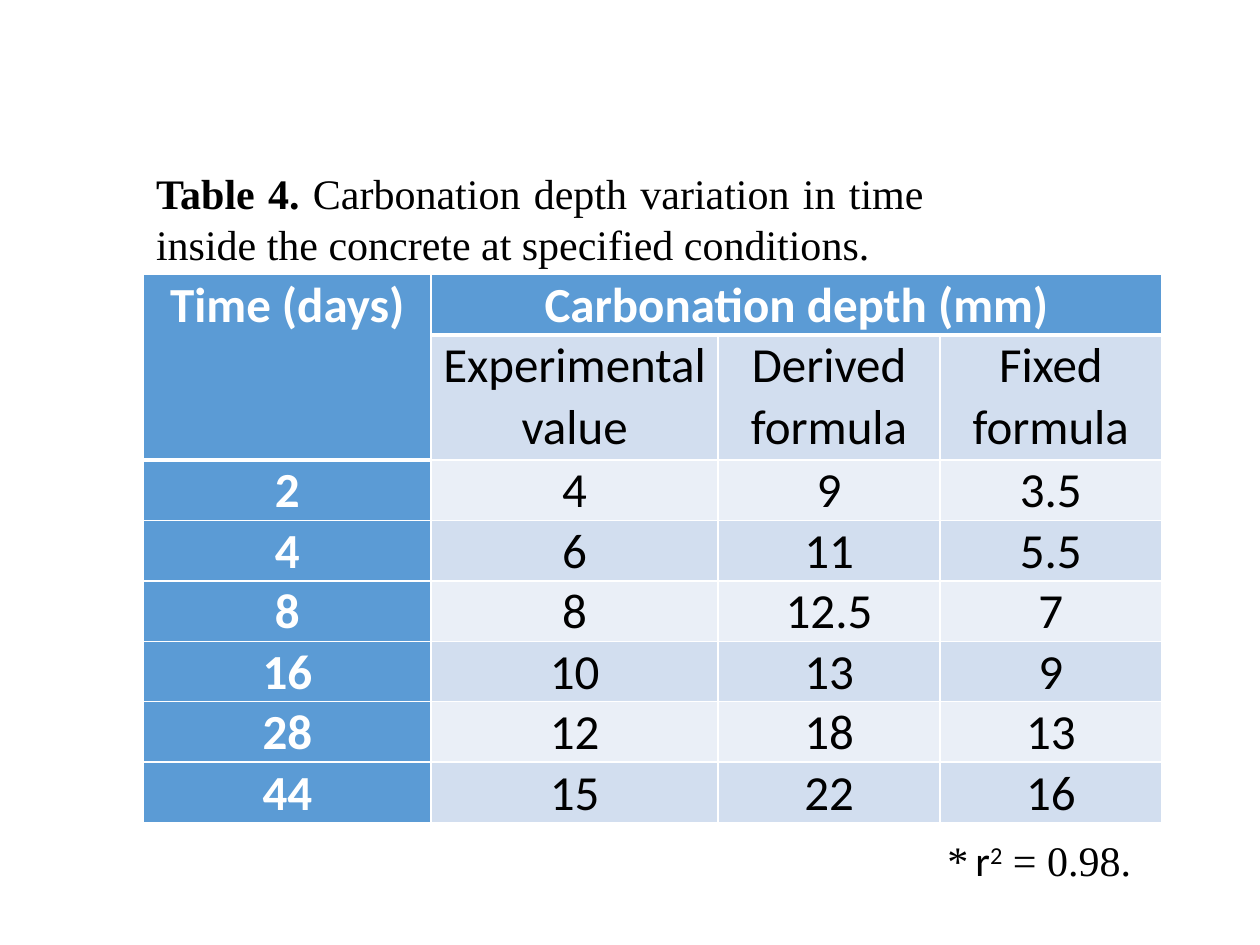
from dataclasses import dataclass
from lxml import etree
from pptx import Presentation
from pptx import util as u
from pptx.dml.color import RGBColor
from pptx.enum import text
from pptx.oxml.ns import qn


@dataclass(frozen=True)
class Theme:
    header: str = "5B9BD5"
    bands: tuple = ("EAEFF7", "D2DEEF")
    light: str = "FFFFFF"
    dark: str = "000000"
    serif: str = "Times New Roman"
    sans: str = "Calibri"
    cell_size: int = 28
    note_size: int = 24
    gap_size: int = 18
    thin: int = 1
    thick: int = 3


THEME = Theme()
ALIGN = text.PP_ALIGN

CAPTION = [
    ("Table 4.", THEME.serif, THEME.note_size, True, 0),
    (" Carbonation depth variation in time inside the concrete at specified conditions.",
     THEME.serif, THEME.note_size, False, 0),
]
FOOTNOTE = [
    ("*", THEME.serif, THEME.note_size, False, 0),
    (" ", THEME.sans, THEME.gap_size, False, 0),
    ("r", THEME.sans, THEME.note_size, False, 0),
    ("2", THEME.sans, THEME.note_size, False, 30),
    (" = 0.98.", THEME.serif, THEME.note_size, False, 0),
]
ROWS = [
    ("Time (days)", "Carbonation depth (mm)", "", ""),
    ("", "Experimental value", "Derived formula", "Fixed formula"),
    ("2", "4", "9", "3.5"),
    ("4", "6", "11", "5.5"),
    ("8", "8", "12.5", "7"),
    ("16", "10", "13", "9"),
    ("28", "12", "18", "13"),
    ("44", "15", "22", "16"),
]
LEFT, TOP = 1.14, 2.18
COLUMN_WIDTHS = [2.28, 2.28, 1.76, 1.76]
ROW_HEIGHTS = [0.48, 0.99] + [0.48] * 6


def format_paragraph(paragraph, alignment):
    paragraph.alignment = alignment
    paragraph.line_spacing = 1.02
    paragraph.space_after = u.Pt(0.2)


def format_run(run, face, size, bold, color):
    run.font.name = face
    run.font.size = u.Pt(size)
    run.font.bold = bold
    run.font.color.rgb = RGBColor.from_string(color)


def add_note(slide, box, parts):
    frame = slide.shapes.add_textbox(*map(u.Inches, box)).text_frame
    frame.word_wrap = True
    frame.auto_size = text.MSO_AUTO_SIZE.SHAPE_TO_FIT_TEXT
    paragraph = frame.paragraphs[0]
    format_paragraph(paragraph, ALIGN.JUSTIFY)
    for words, face, size, bold, baseline in parts:
        run = paragraph.add_run()
        run.text = words
        format_run(run, face, size, bold, THEME.dark)
        if baseline:
            run.font._element.set("baseline", str(baseline * 1000))


def add_borders(cell, widths):
    properties = cell._tc.get_or_add_tcPr()
    for side, width in zip("LRTB", widths):
        line = etree.SubElement(properties, qn(f"a:ln{side}"), w=str(u.Pt(width)))
        fill = etree.SubElement(line, qn("a:solidFill"))
        etree.SubElement(fill, qn("a:srgbClr"), val=THEME.light)


def format_cell(cell, words, row, column):
    is_header = row == 0 or column == 0
    header_end = 1 if column == 0 else 0
    top = THEME.thick if row == header_end + 1 else THEME.thin
    bottom = THEME.thick if row <= header_end else THEME.thin
    add_borders(cell, (THEME.thin, THEME.thin, top, bottom))
    cell.fill.solid()
    cell.fill.fore_color.rgb = RGBColor.from_string(
        THEME.header if is_header else THEME.bands[row % 2])
    cell.margin_left = cell.margin_right = u.Inches(0.07)
    cell.margin_top = cell.margin_bottom = 0
    paragraph = cell.text_frame.paragraphs[0]
    paragraph.text = words
    format_paragraph(paragraph, ALIGN.CENTER)
    for run in paragraph.runs:
        format_run(run, THEME.sans, THEME.cell_size, is_header,
                   THEME.light if is_header else THEME.dark)


def add_depth_table(slide):
    box = (LEFT, TOP, sum(COLUMN_WIDTHS), sum(ROW_HEIGHTS))
    table = slide.shapes.add_table(
        len(ROWS), len(COLUMN_WIDTHS), *map(u.Inches, box)).table
    table.first_col = True
    for column, width in zip(table.columns, COLUMN_WIDTHS):
        column.width = u.Inches(width)
    for row, height in zip(table.rows, ROW_HEIGHTS):
        row.height = u.Inches(height)
    for r, row in enumerate(ROWS):
        for c, words in enumerate(row):
            format_cell(table.cell(r, c), words, r, c)
    table.cell(0, 0).merge(table.cell(1, 0))
    table.cell(0, 1).merge(table.cell(0, 3))


def main():
    deck = Presentation()
    deck.slide_width, deck.slide_height = u.Inches(10), u.Inches(7.5)
    slide = deck.slides.add_slide(deck.slide_layouts[6])
    add_note(slide, (LEFT, 1.27, 6.29, 0.9), CAPTION)
    add_depth_table(slide)
    add_note(slide, (7.42, 6.57, 1.69, 0.5), FOOTNOTE)
    deck.save("out.pptx")


if __name__ == "__main__":
    main()
